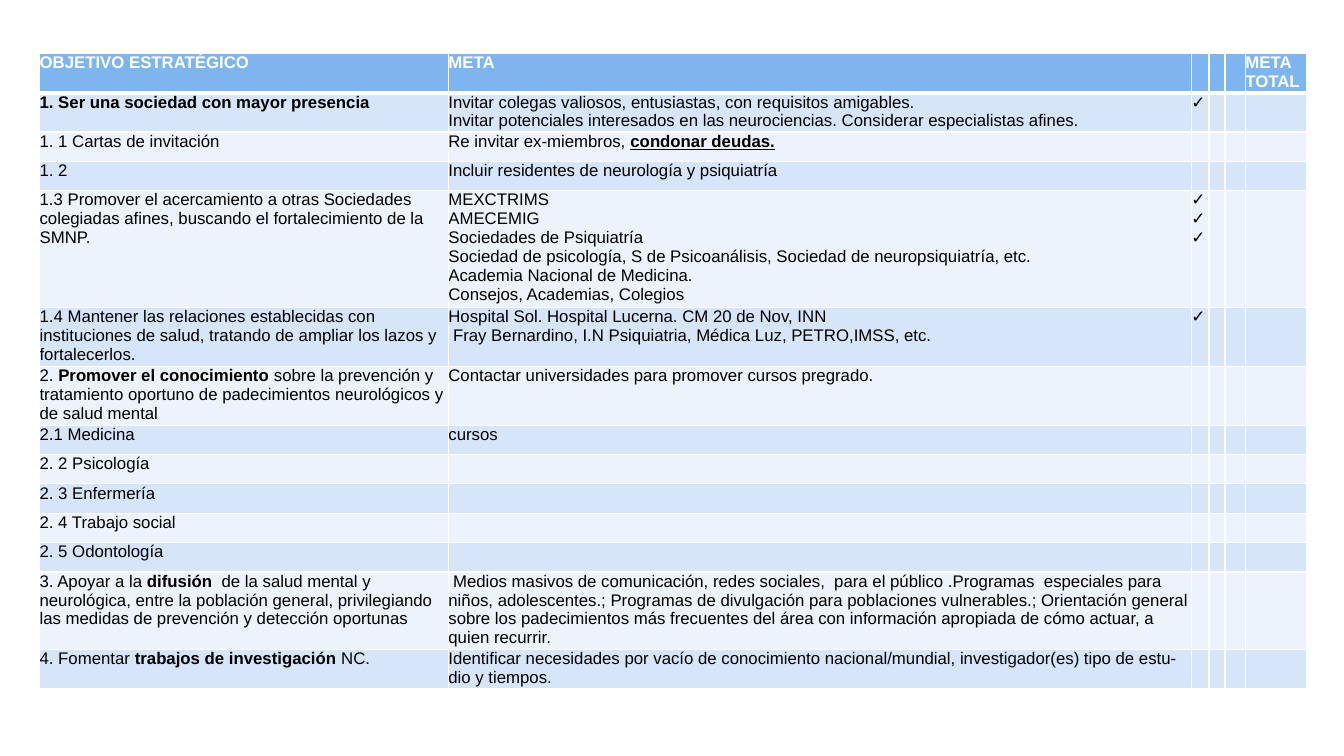
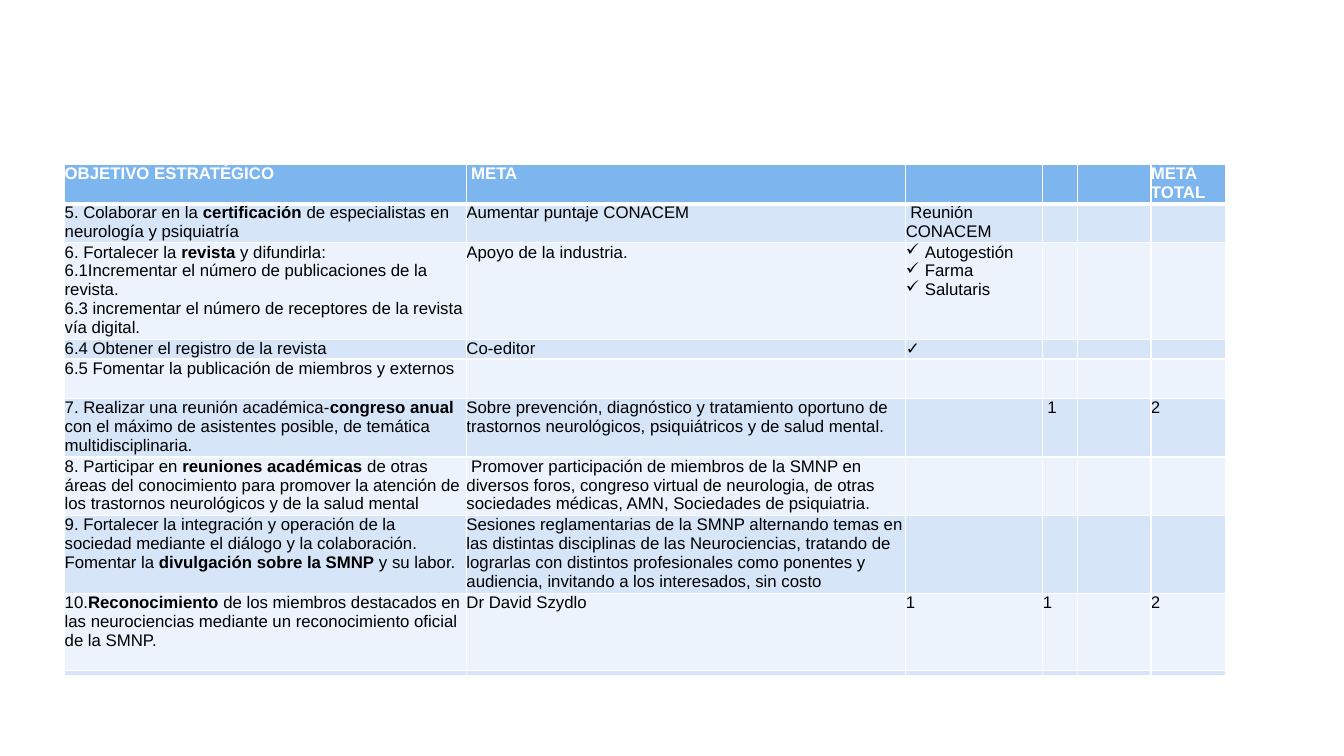
from lxml.etree import SubElement
from pptx import Presentation
from pptx.dml.color import RGBColor
from pptx.oxml.ns import qn
from pptx.util import Pt

COLORS = {
    "header": "7DB6EF",
    "band_dark": "D7E5F9",
    "band_light": "ECF3FC",
    "border": "FFFFFF",
    "header_text": "FFFFFF",
    "text": "000000",
}
FONT = "Arial"
CHECK = "✓"
BULLET_INDENT = 13.7


def write_text(frame, text, size=12, color="text", bold=False):
    for index, line in enumerate(text.split("\n")):
        paragraph = frame.paragraphs[0] if index == 0 else frame.add_paragraph()
        if line.startswith(CHECK + " "):
            line = line[2:]
            properties = paragraph._p.get_or_add_pPr()
            properties.set("marL", str(Pt(BULLET_INDENT)))
            properties.set("indent", str(-Pt(BULLET_INDENT)))
            SubElement(properties, qn("a:buChar"), char=CHECK)
        for position, part in enumerate(line.split("*")):
            if part:
                run = paragraph.add_run()
                run.text = part.strip("_")
                run.font.name = FONT
                run.font.size = Pt(size)
                run.font.bold = bold or position % 2 == 1
                run.font.underline = part.startswith("_")
                run.font.color.rgb = RGBColor.from_string(COLORS[color])
        if not line:
            SubElement(paragraph._p, qn("a:endParaRPr"), sz="100")


def add_borders(cell, top, bottom):
    properties = cell._tc.get_or_add_tcPr()
    for side, width in (("L", 1), ("R", 1), ("T", top), ("B", bottom)):
        line = SubElement(properties, qn(f"a:ln{side}"), w=str(Pt(width)))
        fill = SubElement(line, qn("a:solidFill"))
        SubElement(fill, qn("a:srgbClr"), val=COLORS["border"])


presence_goals = [
    ["OBJETIVO ESTRATÉGICO", "META", "", "", "", "META TOTAL"],
    ["*1. Ser una sociedad con mayor presencia*",
     "Invitar colegas valiosos, entusiastas, con requisitos amigables.\n"
     "Invitar potenciales interesados en las neurociencias. Considerar especialistas afines.",
     CHECK],
    ["1. 1 Cartas de invitación", "Re invitar ex-miembros, *_condonar deudas._*"],
    ["1. 2", "Incluir residentes de neurología y psiquiatría"],
    ["1.3 Promover el acercamiento a otras Sociedades colegiadas afines, "
     "buscando el fortalecimiento de la SMNP.",
     "MEXCTRIMS\nAMECEMIG\nSociedades de Psiquiatría\n"
     "Sociedad de psicología, S de Psicoanálisis, Sociedad de neuropsiquiatría, etc.\n"
     "Academia Nacional de Medicina.\nConsejos, Academias, Colegios",
     "\n".join([CHECK] * 3)],
    ["1.4 Mantener las relaciones establecidas con instituciones de salud, "
     "tratando de ampliar los lazos y fortalecerlos.",
     "Hospital Sol. Hospital Lucerna. CM 20 de Nov, INN\n"
     " Fray Bernardino, I.N Psiquiatria, Médica Luz, PETRO,IMSS, etc.",
     CHECK],
    ["2. *Promover el conocimiento *sobre la prevención y tratamiento oportuno "
     "de padecimientos neurológicos y de salud mental",
     "Contactar universidades para promover cursos pregrado."],
    ["2.1 Medicina", "cursos"],
    ["2. 2 Psicología"],
    ["2. 3 Enfermería"],
    ["2. 4 Trabajo social"],
    ["2. 5 Odontología"],
    ["3. Apoyar a la *difusión * de la salud mental y neurológica, entre la población "
     "general, privilegiando las medidas de prevención y detección oportunas",
     " Medios masivos de comunicación, redes sociales,  para el público .Programas  "
     "especiales para niños, adolescentes.; Programas de divulgación para poblaciones "
     "vulnerables.; Orientación general sobre los padecimientos más frecuentes del área "
     "con información apropiada de cómo actuar, a quien recurrir."],
    ["4. Fomentar *trabajos de investigación *NC.",
     "Identificar necesidades por vacío de conocimiento nacional/mundial, "
     "investigador(es) tipo de estu-\ndio y tiempos."],
]

certification_goals = [
    ["OBJETIVO ESTRATÉGICO", " META", "", "", "", "META TOTAL"],
    ["5. Colaborar en la *certificación* de especialistas en neurología y psiquiatría",
     "Aumentar puntaje CONACEM", " Reunión\nCONACEM"],
    ["6. Fortalecer la *revista* y difundirla:\n"
     "6.1Incrementar el número de publicaciones de la revista.\n"
     "6.3 incrementar el número de receptores de la revista vía digital.",
     "Apoyo de la industria.", "✓ Autogestión\n✓ Farma\n✓ Salutaris"],
    ["6.4 Obtener el registro de la revista", "Co-editor", CHECK],
    ["6.5 Fomentar la publicación de miembros y externos"],
    ["7. Realizar una reunión académica-*congreso anual *con el máximo de asistentes "
     "posible, de temática multidisciplinaria.",
     "Sobre prevención, diagnóstico y tratamiento oportuno de trastornos neurológicos, "
     "psiquiátricos y de salud mental.",
     "", " 1", "", "2"],
    ["8. Participar en *reuniones académicas *de otras áreas del conocimiento para "
     "promover la atención de los trastornos neurológicos y de la salud mental",
     " Promover participación de miembros de la SMNP en diversos foros, congreso virtual "
     "de neurologia, de otras sociedades médicas, AMN, Sociedades de psiquiatria."],
    ["9. Fortalecer la integración y operación de la sociedad mediante el diálogo y la "
     "colaboración.\nFomentar la *divulgación sobre la SMNP *y su labor.",
     "Sesiones reglamentarias de la SMNP alternando temas en las distintas disciplinas de "
     "las Neurociencias, tratando de lograrlas con distintos profesionales como ponentes y "
     "audiencia, invitando a los interesados, sin costo"],
    ["10.*Reconocimiento* de los miembros destacados en las neurociencias mediante un "
     "reconocimiento oficial de la SMNP.",
     "Dr David Szydlo", "1", "1", "", "2"],
    [],
]

goal_tables = [
    (presence_goals, 28.3, 38.3,
     [292, 530.7, 12.6, 11.4, 14.6, 43.5],
     [28, 28, 21, 21, 83.5, 42, 42, 21, 21, 21, 21, 21, 55.5, 27.7]),
    (certification_goals, 46.2, 117.5,
     [287, 313.8, 97.9, 24.6, 52.7, 53.3],
     [28, 28, 69, 14, 28, 42, 42, 55.5, 55, 3.5]),
]

deck = Presentation()
deck.slide_width = Pt(960)
deck.slide_height = Pt(540)

for goals, left, top, widths, heights in goal_tables:
    slide = deck.slides.add_slide(deck.slide_layouts[6])
    table = slide.shapes.add_table(
        len(goals), len(widths), Pt(left), Pt(top), Pt(sum(widths)), Pt(sum(heights))
    ).table
    for column, width in zip(table.columns, widths):
        column.width = Pt(width)
    for row_index, (goal, height) in enumerate(zip(goals, heights)):
        table.rows[row_index].height = Pt(height)
        is_header = row_index == 0
        band = "header" if is_header else ("band_light", "band_dark")[row_index % 2]
        texts = goal + [""] * (len(widths) - len(goal))
        for column_index, text in enumerate(texts):
            cell = table.cell(row_index, column_index)
            cell.margin_left = cell.margin_right = Pt(0)
            cell.margin_top = cell.margin_bottom = Pt(0)
            add_borders(cell, top=3 if row_index == 1 else 1, bottom=3 if is_header else 1)
            cell.fill.solid()
            cell.fill.fore_color.rgb = RGBColor.from_string(COLORS[band])
            write_text(cell.text_frame, text, bold=is_header,
                       color="header_text" if is_header else "text")

deck.save("out.pptx")
